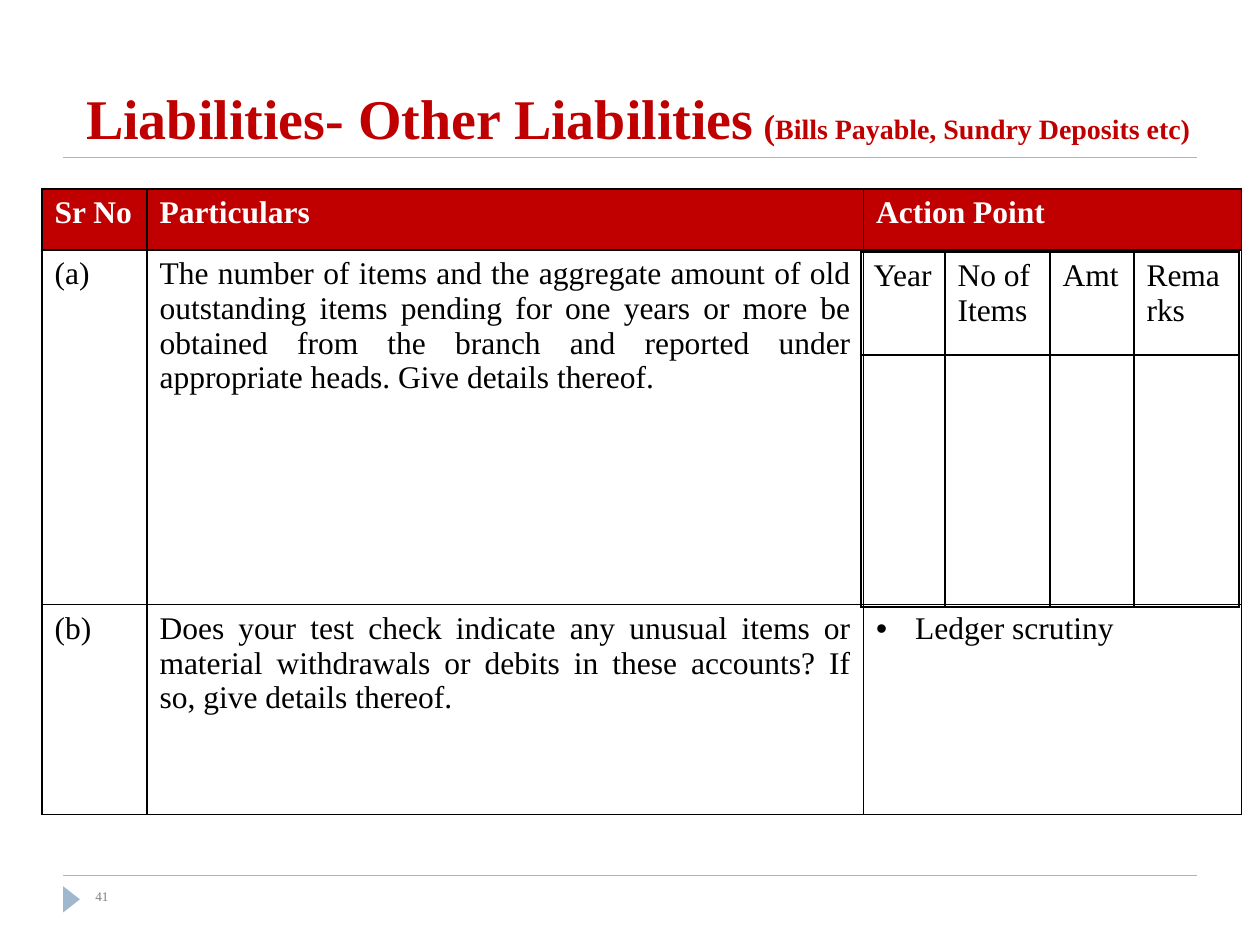
from dataclasses import dataclass

from lxml.etree import SubElement
from pptx import Presentation
from pptx.dml.color import RGBColor
from pptx.enum.shapes import MSO_CONNECTOR, MSO_SHAPE
from pptx.enum.text import MSO_ANCHOR, MSO_AUTO_SIZE, PP_ALIGN
from pptx.oxml.ns import qn
from pptx.util import Inches, Pt

TITLE_ONLY = 5
COLUMNS, ROWS = 120, 90
WIDTH, HEIGHT = Inches(10), Inches(7.5)


@dataclass(frozen=True)
class Theme:
    font: str = "Times New Roman"
    accent: str = "C00000"
    rule: str = "9FB8CD"
    ink: str = "000000"
    paper: str = "FFFFFF"
    muted: str = "808080"
    title: float = 32
    bracket: float = 20
    subtitle: float = 16
    body: float = 18
    number: float = 7.5
    rule_width: float = 0.75
    border_width: float = 1


THEME = Theme()


@dataclass(frozen=True)
class Box:
    left: float
    top: float
    width: float
    height: float

    def place(self):
        across, down = WIDTH / COLUMNS, HEIGHT / ROWS
        return (round(self.left * across), round(self.top * down),
                round(self.width * across), round(self.height * down))


def apply(target, values):
    for name, value in values.items():
        setattr(target, name, value)


def add_span(para, text, size, color, bold=False):
    span = para.add_run()
    span.text = text
    apply(span.font, {"name": THEME.font, "size": Pt(size), "bold": bold})
    span.font.color.rgb = RGBColor.from_string(color)


def add_title(page, box):
    title = page.shapes.title
    apply(title, dict(zip(("left", "top", "width", "height"), box.place())))
    apply(title.text_frame, {"vertical_anchor": MSO_ANCHOR.BOTTOM, "word_wrap": True,
                             "auto_size": MSO_AUTO_SIZE.NONE})
    para = title.text_frame.paragraphs[0]
    para.alignment = PP_ALIGN.LEFT
    for text, size in (("Liabilities- Other Liabilities", THEME.title),
                       (" (", THEME.bracket),
                       ("Bills Payable, Sundry Deposits etc)", THEME.subtitle)):
        add_span(para, text, size, THEME.accent, True)


def add_rule(page, box):
    left, top, width, height = box.place()
    rule = page.shapes.add_connector(MSO_CONNECTOR.STRAIGHT, left, top, left + width, top + height)
    rule.line.color.rgb = RGBColor.from_string(THEME.rule)
    rule.line.width = Pt(THEME.rule_width)
    SubElement(rule._element.spPr, qn("a:effectLst"))


def add_footer(page, box):
    add_rule(page, Box(box.left, box.top, box.width, 0))
    marker = page.shapes.add_shape(
        MSO_SHAPE.ISOSCELES_TRIANGLE,
        *Box(box.left - 0.44, box.top + 1.45, 2.5, 1.6).place())
    marker.rotation = 90
    marker.shadow.inherit = False
    marker.fill.solid()
    marker.fill.fore_color.rgb = RGBColor.from_string(THEME.rule)
    marker.line.fill.background()
    number = page.shapes.add_textbox(*Box(box.left + 1.9, box.top + 0.6, 52, 3.6).place())
    number.text_frame.word_wrap = True
    add_span(number.text_frame.paragraphs[0], "41", THEME.number, THEME.muted)


def add_borders(cell):
    properties = cell._tc.get_or_add_tcPr()
    for side in ("lnL", "lnR", "lnT", "lnB"):
        line = SubElement(properties, qn(f"a:{side}"), w=str(Pt(THEME.border_width)))
        SubElement(SubElement(line, qn("a:solidFill")), qn("a:srgbClr"), val=THEME.ink)


def add_bullet(para):
    properties = para._p.get_or_add_pPr()
    indent = Inches(0.31)
    properties.set("marL", str(indent))
    properties.set("indent", str(-indent))
    SubElement(properties, qn("a:buFont"), typeface="Arial")
    SubElement(properties, qn("a:buChar"), char="•")


def add_grid(page, box, widths, heights, texts, align, header=False):
    table = page.shapes.add_table(len(heights), len(widths), *box.place()).table
    apply(table, {"first_row": header, "horz_banding": False})
    for column, width in zip(table.columns, widths):
        column.width = round(width * WIDTH / COLUMNS)
    for row, height in zip(table.rows, heights):
        row.height = round(height * HEIGHT / ROWS)
    for row_index, row_texts in enumerate(texts):
        is_header = header and row_index == 0
        for column_index, text in enumerate(row_texts):
            cell = table.cell(row_index, column_index)
            add_borders(cell)
            if is_header:
                cell.fill.solid()
                cell.fill.fore_color.rgb = RGBColor.from_string(THEME.accent)
            else:
                cell.fill.background()
            para = cell.text_frame.paragraphs[0]
            para.alignment = align
            if text:
                add_span(para, text, THEME.body, THEME.paper if is_header else THEME.ink, is_header)
    return table


def add_checklist(page, box):
    widths = (10, box.width - 46, 36)
    heights = (5.8, 33.8, 20)
    texts = (
        ("Sr No", "Particulars", "Action Point"),
        ("(a)", "The number of items and the aggregate amount of old outstanding items pending "
                "for one years or more be obtained from the branch and reported under "
                "appropriate heads. Give details thereof.", ""),
        ("(b)", "Does your test check indicate any unusual items or material withdrawals or "
                "debits in these accounts? If so, give details thereof.", "Ledger scrutiny"),
    )
    table = add_grid(page, box, widths, heights, texts, PP_ALIGN.JUSTIFY, header=True)
    add_bullet(table.cell(2, 2).text_frame.paragraphs[0])


def add_details(page, box):
    texts = (("Year", "No of Items", "Amt", "Remarks"), ("",) * 4)
    add_grid(page, box, (8, 10, 8, 10), (9.8, 24), texts, PP_ALIGN.LEFT)


def main():
    deck = Presentation()
    apply(deck, {"slide_width": WIDTH, "slide_height": HEIGHT})
    page = deck.slides.add_slide(deck.slide_layouts[TITLE_ONLY])
    add_rule(page, Box(6, 15, 108, 0))
    add_footer(page, Box(6, 83.4, 108, 5))
    add_title(page, Box(7, 2, 108, 13))
    add_checklist(page, Box(4, 18, 114.25, 59.6))
    add_details(page, Box(82, 24, 36, 33.8))
    deck.save("out.pptx")


if __name__ == "__main__":
    main()
